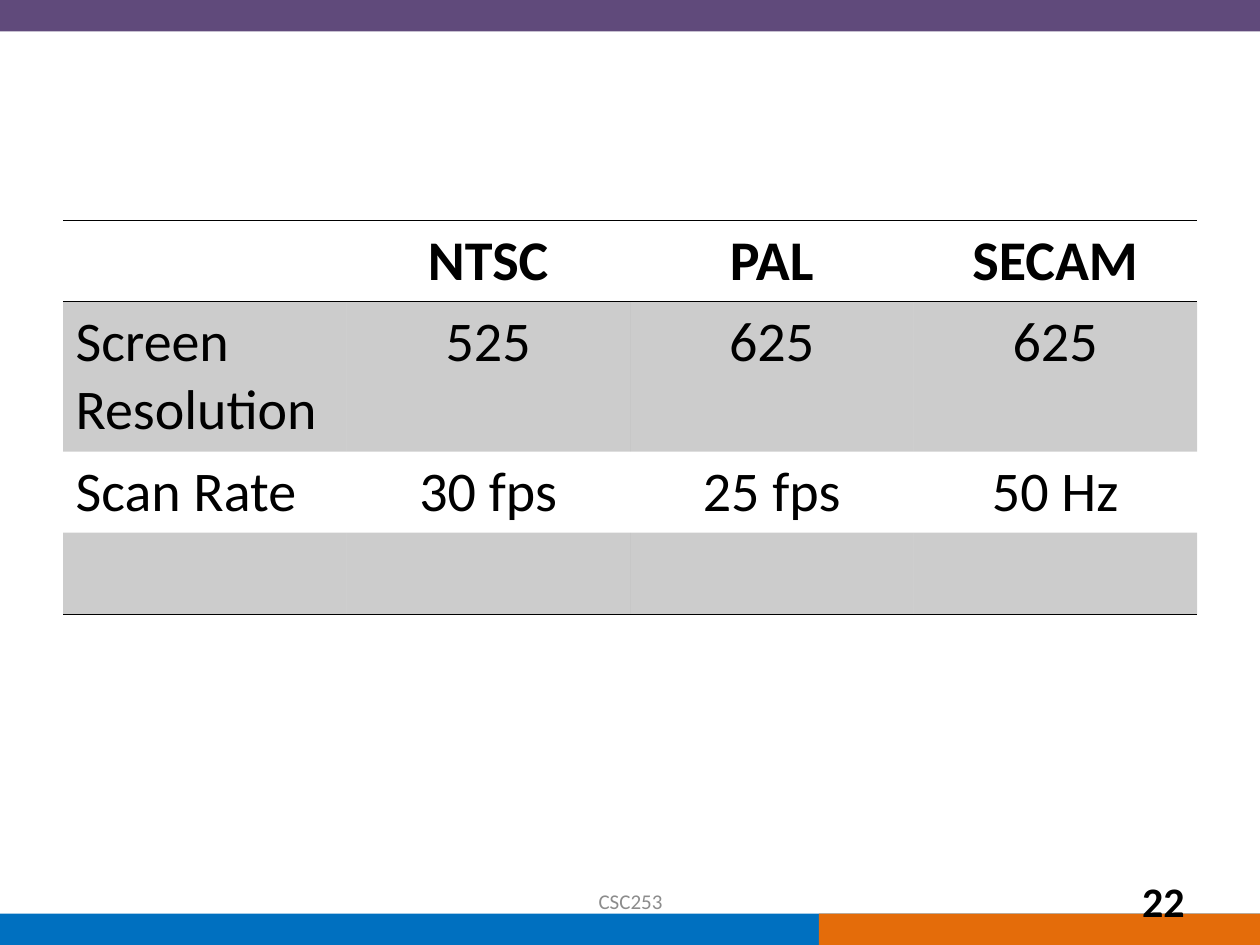
import pptx
import pptx.dml.color
import pptx.enum.shapes
import pptx.enum.text
import pptx.oxml
import pptx.oxml.ns
import pptx.util
from lxml import etree

Inches = pptx.util.Inches
ALIGN = pptx.enum.text.PP_ALIGN
NO_STYLE = "{2D5ABB26-0587-4C30-8999-92F81FD0307C}"


def color(value):
    return pptx.dml.color.RGBColor.from_string(value)


class SlideBuilder:
    font = "Calibri"
    ink = "000000"

    def __init__(self, page):
        self.page = page

    def bar(self, left, top, width, height, fill):
        shape = self.page.shapes.add_shape(
            pptx.enum.shapes.MSO_SHAPE.RECTANGLE,
            Inches(left), Inches(top), Inches(width), Inches(height))
        shape.shadow.inherit = False
        shape.fill.solid()
        shape.fill.fore_color.rgb = color(fill)
        shape.line.fill.background()

    def fill_text(self, frame, text, align, size, bold=False, ink=ink):
        para = frame.paragraphs[0]
        para.alignment = align
        span = para.add_run()
        span.text = text
        style = {"name": self.font, "size": pptx.util.Pt(size), "bold": bold}
        for name, value in style.items():
            setattr(span.font, name, value)
        span.font.color.rgb = color(ink)

    def label(self, left, top, width, height, text, align, size, **style):
        box = self.page.shapes.add_textbox(
            Inches(left), Inches(top), Inches(width), Inches(height))
        box.text_frame.word_wrap = True
        box.text_frame.vertical_anchor = pptx.enum.text.MSO_ANCHOR.MIDDLE
        self.fill_text(box.text_frame, text, align, size, **style)

    def border(self, cell, side):
        line = pptx.oxml.parse_xml(
            f'<a:ln{side} {pptx.oxml.ns.nsdecls("a")} w="12700"><a:solidFill>'
            f'<a:srgbClr val="{self.ink}"/></a:solidFill></a:ln{side}>')
        cell._tc.get_or_add_tcPr().insert(0, line)

    def shade(self, cell, percent):
        cell.fill.solid()
        cell.fill.fore_color.rgb = color(self.ink)
        # The fill follows any border lines in the cell properties
        fill = cell._tc.tcPr.find(pptx.oxml.ns.qn("a:solidFill"))
        tint = fill.find(pptx.oxml.ns.qn("a:srgbClr"))
        etree.SubElement(tint, pptx.oxml.ns.qn("a:alpha"), val=str(percent * 1000))

    def table(self, left, top, width, heights, rows, size):
        frame = self.page.shapes.add_table(
            len(rows), len(rows[0]), Inches(left), Inches(top),
            Inches(width), Inches(sum(heights)))
        table = frame.table
        table._tbl.tblPr.find(pptx.oxml.ns.qn("a:tableStyleId")).text = NO_STYLE
        table.horz_banding = False
        for r, (height, texts) in enumerate(zip(heights, rows)):
            table.rows[r].height = Inches(height)
            for c, text in enumerate(texts):
                cell = table.cell(r, c)
                if text:
                    align = ALIGN.CENTER if c else ALIGN.LEFT
                    self.fill_text(cell.text_frame, text, align, size, bold=r == 0)
                # Every second row is shaded
                if r % 2:
                    self.shade(cell, 20)
                else:
                    cell.fill.background()
                # Rules below the header and last row, and above the header
                if r in (0, len(rows) - 1):
                    self.border(cell, "B")
                if r == 0:
                    self.border(cell, "T")


def main():
    deck = pptx.Presentation()
    deck.slide_width, deck.slide_height = Inches(10), Inches(7.5)
    slide = SlideBuilder(deck.slides.add_slide(deck.slide_layouts[6]))

    # Coloured bars at the top and bottom
    slide.bar(0, 0, 10, 0.25, "604A7B")
    slide.bar(-0.08, 7.25, 10.08, 0.25, "0070C0")
    slide.bar(6.5, 7.25, 3.5, 0.25, "E46C0A")

    # Comparison of the television standards
    slide.table(0.5, 1.75, 9, [0.64, 1.19, 0.64, 0.65], [
        ["", "NTSC", "PAL", "SECAM"],
        ["Screen Resolution", "525", "625", "625"],
        ["Scan Rate", "30 fps", "25 fps", "50 Hz"],
        [""] * 4,
    ], 32)

    # Slide number and footer
    slide.label(7.17, 6.95, 2.33, 0.4, "22", ALIGN.RIGHT, 24, bold=True)
    slide.label(3.42, 6.95, 3.17, 0.4, "CSC253", ALIGN.CENTER, 12, ink="8C8C8C")

    deck.save("out.pptx")


if __name__ == "__main__":
    main()
